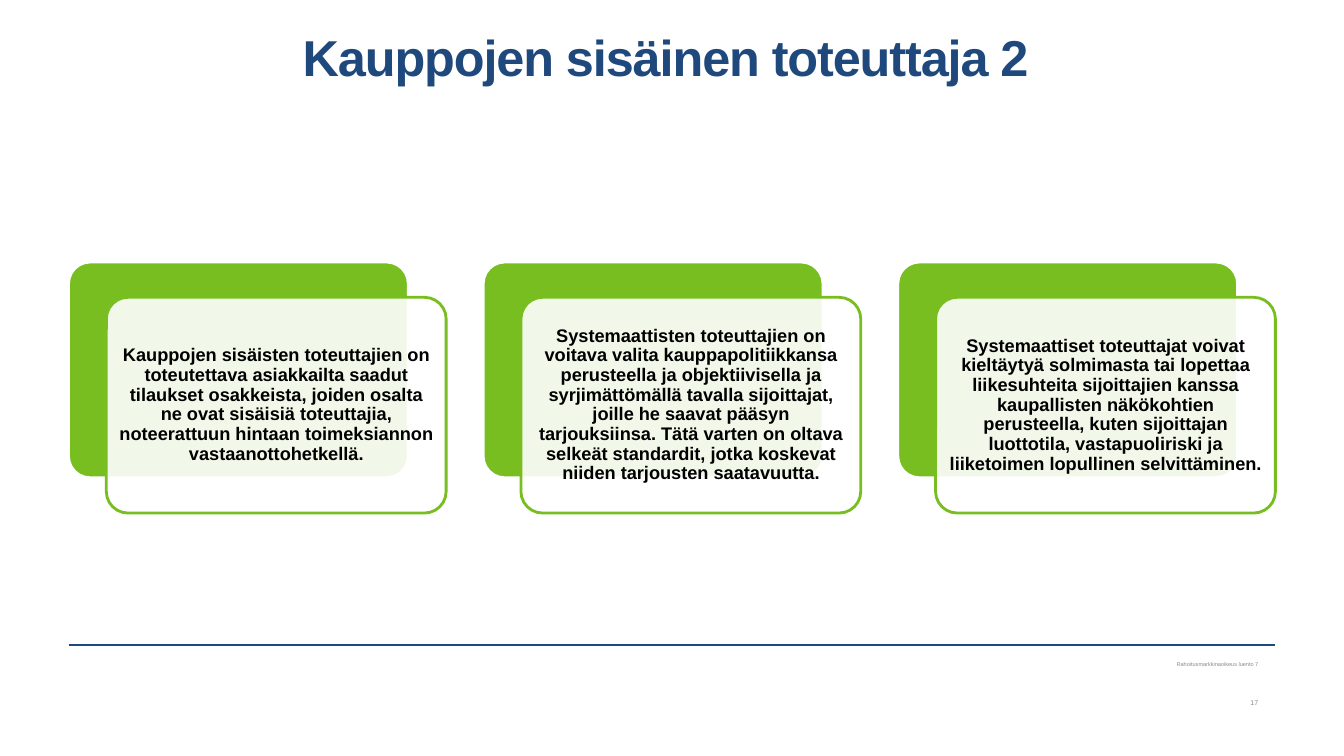
"""Build the slide on the systematic internaliser: title, three layered cards and a footer."""
from dataclasses import dataclass

from lxml import etree
from pptx import Presentation
from pptx.dml.color import RGBColor
from pptx.enum.shapes import MSO_CONNECTOR, MSO_SHAPE
from pptx.enum.text import MSO_ANCHOR, PP_ALIGN
from pptx.oxml.ns import qn
from pptx.shapes.autoshape import Shape
from pptx.slide import Slide
from pptx.util import Inches, Pt

ROUNDED = MSO_SHAPE.ROUNDED_RECTANGLE
STRAIGHT = MSO_CONNECTOR.STRAIGHT
TOP, MIDDLE = MSO_ANCHOR.TOP, MSO_ANCHOR.MIDDLE
CENTER, RIGHT = PP_ALIGN.CENTER, PP_ALIGN.RIGHT

COLORS = {
    "navy": "1F497D",
    "green": "78BE20",
    "white": "FFFFFF",
    "black": "000000",
    "gray": "8C8C8C",
}

MARGIN_LEFT, CONTENT_WIDTH = 0.68, 11.97
CARD_TOP, CARD_WIDTH, CARD_HEIGHT = 2.6, 3.37, 2.14
CARD_OFFSET_X, CARD_OFFSET_Y = 0.375, 0.35
CARD_PITCH = (CONTENT_WIDTH - CARD_WIDTH - CARD_OFFSET_X) / 2
RULE_TOP = 6.4


@dataclass(frozen=True)
class TextStyle:
    size: float
    color: str
    align: PP_ALIGN
    anchor: MSO_ANCHOR
    insets: tuple[float, float, float, float]
    line_spacing: float
    space_after: float = 0
    bold: bool = False
    tracking: int = 0


@dataclass(frozen=True)
class Label:
    text: str
    box: tuple[float, float, float, float]
    style: TextStyle


FOOTER_INSETS = (0.1, 0.05, 0, 0.05)
TITLE_STYLE = TextStyle(36, "navy", CENTER, TOP, (0, 0, 0, 0), 0.85, bold=True, tracking=-80)
FOOTER_STYLE = TextStyle(4, "gray", RIGHT, MIDDLE, FOOTER_INSETS, 0.9, space_after=6)
NUMBER_STYLE = TextStyle(5, "gray", RIGHT, MIDDLE, FOOTER_INSETS, 0.9, space_after=6)
CARD_STYLE = TextStyle(13, "black", CENTER, MIDDLE, (0.05, 0.05, 0.05, 0.05), 0.9, bold=True)

LABELS = [
    Label("Kauppojen sisäinen toteuttaja 2 ", (MARGIN_LEFT, 0.35, CONTENT_WIDTH, 1.31), TITLE_STYLE),
    Label("Rahoitusmarkkinaoikeus luento 7", (7.2, 6.51, 5.28, 0.17), FOOTER_STYLE),
    Label("17", (7.2, 6.89, 5.28, 0.18), NUMBER_STYLE),
]

CARD_TEXTS = [
    "Kauppojen sisäisten toteuttajien on toteutettava asiakkailta saadut tilaukset "
    "osakkeista, joiden osalta ne ovat sisäisiä toteuttajia, noteerattuun hintaan "
    "toimeksiannon vastaanottohetkellä.",
    "Systemaattisten toteuttajien on voitava valita kauppapolitiikkansa perusteella ja "
    "objektiivisella ja syrjimättömällä tavalla sijoittajat, joille he saavat pääsyn "
    "tarjouksiinsa. Tätä varten on oltava selkeät standardit, jotka koskevat niiden "
    "tarjousten saatavuutta.",
    "Systemaattiset toteuttajat voivat kieltäytyä solmimasta tai lopettaa liikesuhteita "
    "sijoittajien kanssa kaupallisten näkökohtien perusteella, kuten sijoittajan "
    "luottotila, vastapuoliriski ja liiketoimen lopullinen selvittäminen.",
]


def rgb(name: str) -> RGBColor:
    return RGBColor.from_string(COLORS[name])


def apply_format(target: object, values: dict[str, object]) -> None:
    for attribute, value in values.items():
        setattr(target, attribute, value)


def write_text(holder: Shape, text: str, style: TextStyle) -> None:
    frame = holder.text_frame
    left, top, right, bottom = map(Inches, style.insets)
    apply_format(frame, {
        "word_wrap": True,
        "vertical_anchor": style.anchor,
        "margin_left": left,
        "margin_top": top,
        "margin_right": right,
        "margin_bottom": bottom,
    })
    paragraph = frame.paragraphs[0]
    apply_format(paragraph, {
        "alignment": style.align,
        "line_spacing": style.line_spacing,
        "space_after": Pt(style.space_after),
    })
    run = paragraph.add_run()
    run.text = text
    apply_format(run.font, {"name": "Arial", "size": Pt(style.size), "bold": style.bold})
    run.font.color.rgb = rgb(style.color)
    if style.tracking:
        run.font._element.set("spc", str(style.tracking))


def add_label(slide: Slide, label: Label) -> None:
    write_text(slide.shapes.add_textbox(*map(Inches, label.box)), label.text, label.style)


def add_panel(slide: Slide, left: float, top: float, fill: str, outline: str) -> Shape:
    panel = slide.shapes.add_shape(
        ROUNDED, Inches(left), Inches(top), Inches(CARD_WIDTH), Inches(CARD_HEIGHT))
    panel.adjustments[0] = 0.1
    panel.shadow.inherit = False
    panel.fill.solid()
    panel.fill.fore_color.rgb = rgb(fill)
    panel.line.color.rgb = rgb(outline)
    panel.line.width = Pt(2)
    return panel


def set_opacity(panel: Shape, percent: int) -> None:
    color = panel._element.spPr.find(qn("a:solidFill")).find(qn("a:srgbClr"))
    etree.SubElement(color, qn("a:alpha")).set("val", str(percent * 1000))


def add_card(slide: Slide, left: float, text: str) -> None:
    add_panel(slide, left, CARD_TOP, "green", "white")
    front = add_panel(slide, left + CARD_OFFSET_X, CARD_TOP + CARD_OFFSET_Y, "white", "green")
    set_opacity(front, 90)
    write_text(front, text, CARD_STYLE)


def add_footer_rule(slide: Slide) -> None:
    rule = slide.shapes.add_connector(
        STRAIGHT, Inches(MARGIN_LEFT), Inches(RULE_TOP),
        Inches(MARGIN_LEFT + CONTENT_WIDTH), Inches(RULE_TOP))
    rule.line.color.rgb = rgb("navy")
    rule.line.width = Pt(1)
    etree.SubElement(rule._element.spPr, qn("a:effectLst"))


def main() -> None:
    deck = Presentation()
    apply_format(deck, {"slide_width": Inches(13.33), "slide_height": Inches(7.5)})
    slide = deck.slides.add_slide(deck.slide_layouts[6])
    add_footer_rule(slide)
    for label in LABELS:
        add_label(slide, label)
    for index, text in enumerate(CARD_TEXTS):
        add_card(slide, MARGIN_LEFT + index * CARD_PITCH, text)
    deck.save("out.pptx")


if __name__ == "__main__":
    main()
